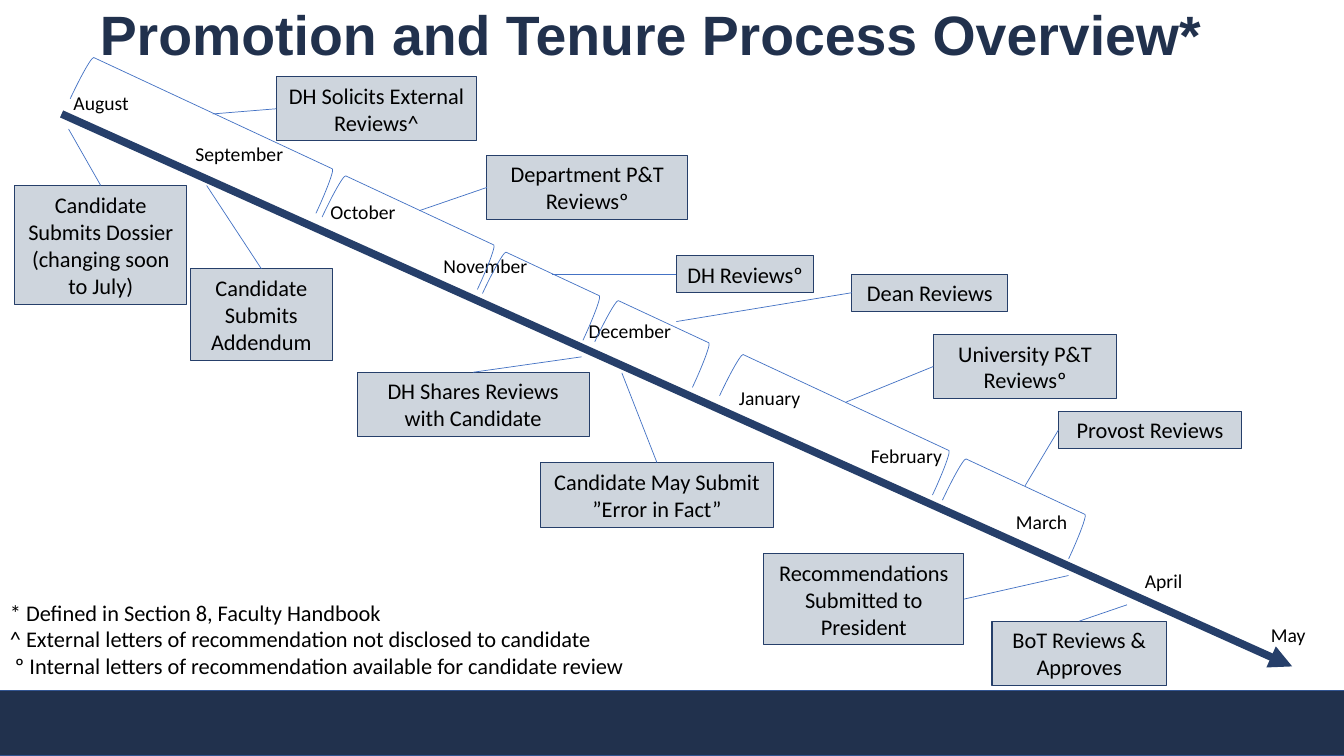
from lxml import etree
from pptx import Presentation
from pptx.dml.color import RGBColor
from pptx.enum.shapes import MSO_CONNECTOR, MSO_SHAPE
from pptx.enum.text import MSO_ANCHOR, MSO_AUTO_SIZE, PP_ALIGN
from pptx.oxml.ns import qn
from pptx.util import Pt

STRAIGHT = MSO_CONNECTOR.STRAIGHT
RECT, BRACKET = MSO_SHAPE.RECTANGLE, MSO_SHAPE.RIGHT_BRACKET
MIDDLE, NO_FIT = MSO_ANCHOR.MIDDLE, MSO_AUTO_SIZE.NONE
LEFT, CENTER = PP_ALIGN.LEFT, PP_ALIGN.CENTER
TOP_SIDE, LEFT_SIDE, RIGHT_SIDE = 0, 1, 3

THEME = {
    "navy": "21314D", "axis": "263F6A", "callout": "CED5DD", "leader": "4472C4",
    "footer_line": "325491", "text": "000000",
    "title_font": "Arial", "body_font": "Calibri",
    "title_size": 39.6, "month_size": 14, "body_size": 16,
}

TITLE = "Promotion and Tenure Process Overview*"
TITLE_BOX = (64.1, 7, 828, 39.6)
FOOTER_BOX = (-0.5, 493.2, 961, 46.8)
AXIS = ((44, 81.4), (923, 476))
NOTES_BOX = (0, 424.1, 468.7, 65.5)
NOTES = [
    "* Defined in Section 8, Faculty Handbook",
    "^ External letters of recommendation not disclosed to candidate",
    " º Internal letters of recommendation available for candidate review",
]

MONTH_H = 24.3
MONTHS = [
    ("August", 45.4, 61.3, 60), ("September", 132.5, 97.9, 78),
    ("October", 229, 139, 62.6), ("November", 309.6, 177.8, 75.6),
    ("December", 413.3, 224.6, 75.6), ("January", 520.6, 272.2, 60),
    ("February", 614.9, 313.2, 70), ("March", 718.6, 360.7, 60),
    ("April", 810.7, 402.5, 44), ("May", 900.7, 441.4, 42.5),
]

BRACKET_W, BRACKET_ANGLE = 33.8, 295
BRACKETS = [
    (128.2, -0.7, 193.7), (275.8, 104.4, 122.4), (370.8, 171.4, 79.2),
    (450, 206.6, 77), (580.3, 218.9, 167.8), (708.5, 313.2, 99.4),
]

LINE_H, PADDING = 19.4, 7.2
CALLOUTS = [
    ("Candidate Submits Dossier (changing soon to July)", 4, (10.4, 132.5, 123.1), TOP_SIDE, (49, 92.2)),
    ("Candidate Submits Addendum", 3, (136.1, 192, 101.2), TOP_SIDE, (147.6, 132.5)),
    ("DH Solicits External Reviews^", 2, (197.3, 54.7, 143.3), LEFT_SIDE, (151.9, 81.4)),
    ("Department P&T Reviewsº", 2, (347.8, 110.9, 143.3), LEFT_SIDE, (299.5, 150.5)),
    ("DH Reviewsº", 1, (483.1, 182.6, 98.3), LEFT_SIDE, (394.6, 195.9)),
    ("Dean Reviews", 1, (608.4, 195.8, 111.6), LEFT_SIDE, (483.1, 229.7)),
    ("DH Shares Reviews with Candidate", 2, (255.1, 265.9, 165.8), TOP_SIDE, (415.4, 254.9)),
    ("Candidate May Submit ”Error in Fact”", 2, (386.4, 330.5, 165.8), TOP_SIDE, (444.2, 266.4)),
    ("University P&T Reviewsº", 2, (666.7, 238.8, 131), LEFT_SIDE, (604.1, 287.3)),
    ("Provost Reviews", 1, (756, 293.9, 131), LEFT_SIDE, (732.2, 347)),
    ("Recommendations Submitted to President", 3, (545.6, 395.3, 142.8), RIGHT_SIDE, (763.2, 411.1)),
    ("BoT Reviews & Approves", 2, (708.6, 443.7, 124.6), TOP_SIDE, (805, 432)),
]


def rgb(name):
    return RGBColor.from_string(THEME[name])


def pts(values):
    return [Pt(v) for v in values]


def style(font, size, color="text", face="body_font", bold=False):
    font.name = THEME[face]
    font.size = Pt(THEME[size])
    font.bold = bold
    font.color.rgb = rgb(color)


def add_text(slide, box, lines, size):
    tf = slide.shapes.add_textbox(*pts(box)).text_frame
    tf.word_wrap = True
    tf.text = "\n".join(lines)
    for p in tf.paragraphs:
        style(p.font, size)


def add_box(slide, kind, box, fill, line, weight):
    sp = slide.shapes.add_shape(kind, *pts(box))
    sp.shadow.inherit = False
    if fill:
        sp.fill.solid()
        sp.fill.fore_color.rgb = rgb(fill)
    else:
        sp.fill.background()
    sp.line.color.rgb = rgb(line)
    sp.line.width = Pt(weight)
    return sp


def add_line(slide, start, end, color, weight):
    line = slide.shapes.add_connector(STRAIGHT, *pts(start + end))
    line.line.color.rgb = rgb(color)
    line.line.width = Pt(weight)
    etree.SubElement(line._element.spPr, qn("a:effectLst"))
    return line


def add_callout(slide, text, lines, place, side, target):
    sp = add_box(slide, RECT, (*place, PADDING + LINE_H * lines), "callout", "axis", 0.75)
    tf = sp.text_frame
    tf.word_wrap = True
    tf.text = text
    p = tf.paragraphs[0]
    p.alignment = CENTER
    style(p.font, "body_size")
    leader = add_line(slide, target, target, "leader", 0.5)
    leader.begin_connect(sp, side)


def add_title(slide):
    title = slide.shapes.title
    title.left, title.top, title.width, title.height = pts(TITLE_BOX)
    tf = title.text_frame
    tf.text = TITLE
    tf.auto_size = NO_FIT
    tf.vertical_anchor = MIDDLE
    p = tf.paragraphs[0]
    p.alignment = LEFT
    p.line_spacing = 0.9
    style(p.font, "title_size", "navy", "title_font", True)


def main():
    prs = Presentation()
    prs.slide_width, prs.slide_height = Pt(960), Pt(540)
    slide = prs.slides.add_slide(prs.slide_layouts[5])
    add_box(slide, RECT, FOOTER_BOX, "navy", "footer_line", 1)
    add_title(slide)

    axis = add_line(slide, *AXIS, "axis", 5.5)
    outline = axis._element.spPr.find(qn("a:ln"))
    etree.SubElement(outline, qn("a:tailEnd"), type="triangle")

    for name, left, top, width in MONTHS:
        add_text(slide, (left, top, width, MONTH_H), [name], "month_size")
    add_text(slide, NOTES_BOX, NOTES, "body_size")

    for callout in CALLOUTS:
        add_callout(slide, *callout)
    for left, top, length in BRACKETS:
        sp = add_box(slide, BRACKET, (left, top, BRACKET_W, length), None, "leader", 0.5)
        sp.rotation = BRACKET_ANGLE

    prs.save("out.pptx")


if __name__ == "__main__":
    main()
